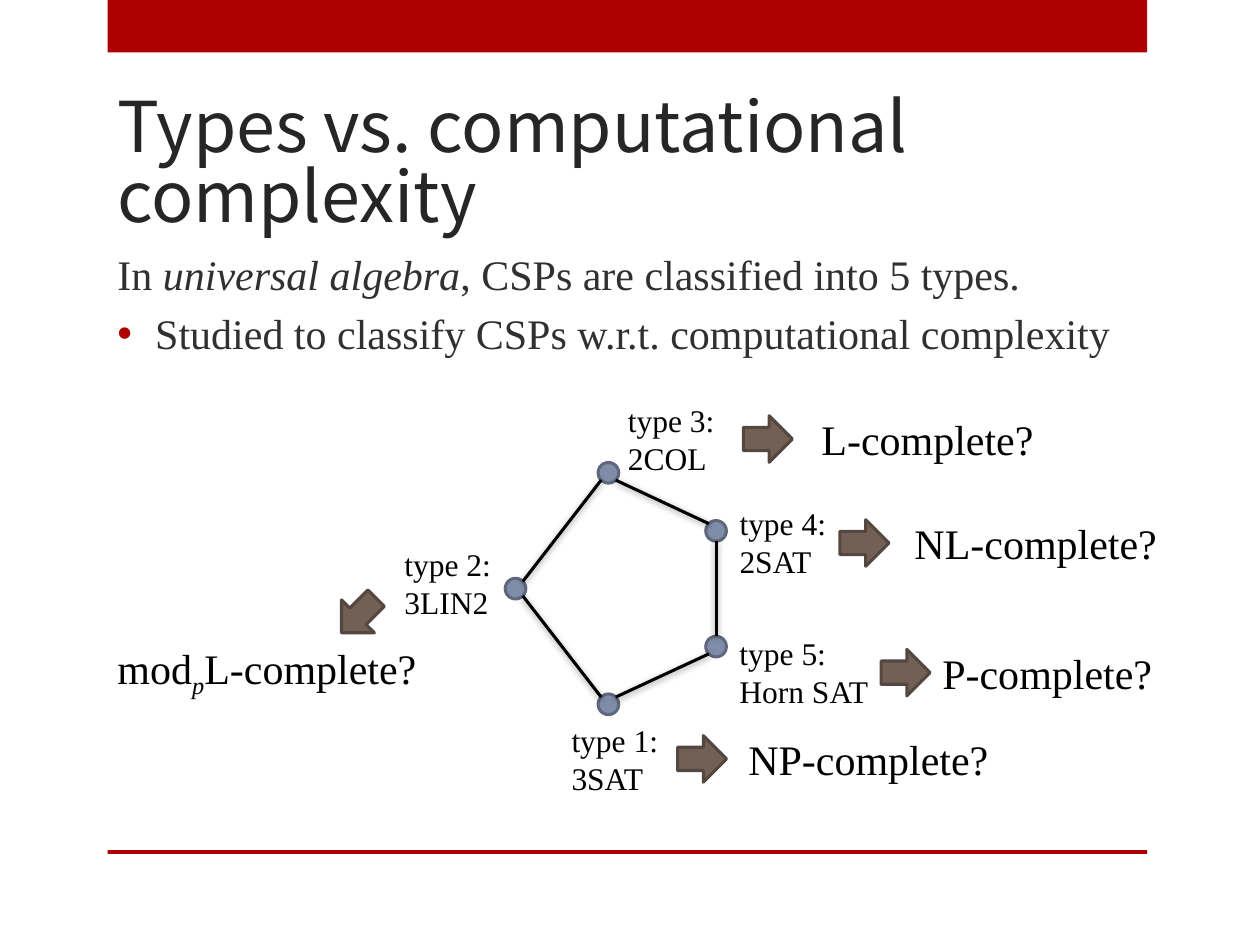
from dataclasses import dataclass
from math import hypot

from lxml.etree import SubElement
from pptx import Presentation
from pptx.dml.color import RGBColor
from pptx.enum.shapes import MSO_CONNECTOR, MSO_SHAPE
from pptx.enum.text import MSO_ANCHOR, MSO_AUTO_SIZE
from pptx.oxml.ns import qn
from pptx.slide import Slide
from pptx.util import Pt

NODE_SIZE = 11.8


def color(hex_text):
    return RGBColor.from_string(hex_text)


def add_element(parent, tag, **attributes):
    return SubElement(parent, qn(tag), attributes)


@dataclass
class TypeDiagram:
    """The slide being filled, with its fonts and colours."""
    slide: Slide
    title_font: str = "Noto Sans CJK JP"
    text_font: str = "Times New Roman"
    accent: str = "AD0101"
    black: str = "000000"
    node_colors: tuple = ("808DA9", "5F687D")
    arrow_colors: tuple = ("726056", "544740")

    def shape(self, kind, left, top, width, height, fill, line=None):
        shape = self.slide.shapes.add_shape(
            kind, Pt(left), Pt(top), Pt(width), Pt(height))
        shape.shadow.inherit = False
        shape.fill.solid()
        shape.fill.fore_color.rgb = color(fill)
        if line:
            shape.line.color.rgb = color(line)
            shape.line.width = Pt(1.75)
        else:
            shape.line.fill.background()
        return shape

    def bar(self, top, height):
        self.shape(MSO_SHAPE.RECTANGLE, 61.5, top, 594, height, self.accent)

    def node(self, x, y):
        self.shape(MSO_SHAPE.OVAL, x - NODE_SIZE / 2, y - NODE_SIZE / 2,
                   NODE_SIZE, NODE_SIZE, *self.node_colors)

    def edge(self, start, end):
        """Join the rims of two nodes, at the corner or side that faces the other."""
        step_x, step_y = ((b > a) - (b < a) for a, b in zip(start, end))
        reach = NODE_SIZE / 2 / hypot(step_x, step_y)
        line = self.slide.shapes.add_connector(
            MSO_CONNECTOR.STRAIGHT,
            Pt(start[0] + step_x * reach), Pt(start[1] + step_y * reach),
            Pt(end[0] - step_x * reach), Pt(end[1] - step_y * reach))
        line.line.color.rgb = color(self.black)
        line.line.width = Pt(1.75)
        effects = add_element(line._element.spPr, "a:effectLst")
        shadow = add_element(effects, "a:outerShdw", blurRad=str(Pt(4)),
                             dist=str(Pt(1)), dir=str(88 * 60000), rotWithShape="0")
        shade = add_element(shadow, "a:srgbClr", val=self.black)
        add_element(shade, "a:alpha", val="40000")

    def arrow(self, left, top, rotation=0):
        arrow = self.shape(MSO_SHAPE.RIGHT_ARROW, left, top, 28, 26.6, *self.arrow_colors)
        arrow.rotation = rotation

    def text(self, left, top, width, height, paragraphs, size, ink=None,
             font=None, wrap=False):
        """Add a text box; each paragraph is a list of (text, style) spans."""
        box = self.slide.shapes.add_textbox(Pt(left), Pt(top), Pt(width), Pt(height))
        frame = box.text_frame
        frame.word_wrap = wrap
        frame.auto_size = MSO_AUTO_SIZE.NONE if wrap else MSO_AUTO_SIZE.SHAPE_TO_FIT_TEXT
        for index, spans in enumerate(paragraphs):
            para = frame.add_paragraph() if index else frame.paragraphs[0]
            para.font.name = font or self.text_font
            para.font.size = Pt(size)
            para.font.color.rgb = color(ink or self.black)
            for words, style in spans:
                span = para.add_run()
                span.text = words
                if style:
                    span.font.italic = True
                if style == "subscript":
                    span._r.get_or_add_rPr().set("baseline", "-25000")
        return frame

    def title(self, words):
        frame = self.text(60, 54, 594, 84.5, [[(words, None)]], 40, "262626",
                          self.title_font, wrap=True)
        frame.vertical_anchor = MSO_ANCHOR.BOTTOM
        frame.paragraphs[0].line_spacing = 0.83

    def body(self, intro, bullet):
        frame = self.text(60, 138.5, 594, 347.5, [intro, bullet], 24, "303030", wrap=True)
        for para in frame.paragraphs:
            para.space_before = Pt(4.8)
        properties = frame.paragraphs[1]._p.get_or_add_pPr()
        properties.set("marL", str(Pt(21.6)))
        properties.set("indent", str(-Pt(21.6)))
        bullet_color = add_element(properties, "a:buClr")
        add_element(bullet_color, "a:srgbClr", val=self.accent)
        add_element(properties, "a:buFont", typeface="Arial")
        add_element(properties, "a:buChar", char="•")

    def type_label(self, left, top, width, number, problem):
        lines = [f"type {number}:", problem]
        self.text(left, top, width, 51, [[(line, None)] for line in lines], 18)

    def answer(self, left, top, width, spans):
        self.text(left, top, width, 36, [spans], 24)


def main():
    deck = Presentation()
    deck.slide_width, deck.slide_height = Pt(720), Pt(540)
    page = TypeDiagram(deck.slides.add_slide(deck.slide_layouts[6]))

    page.bar(0, 30)
    page.bar(485.8, 2.2)
    page.title("Types vs. computational complexity")
    page.body(
        [("In ", None), ("universal algebra", "italic"),
         (", CSPs are classified into 5 types.", None)],
        [("Studied to classify CSPs w.r.t. computational complexity", None)])

    # Corners of the pentagon, in order around it: types 3, 4, 5, 1, 2
    corners = [(347.7, 270.2), (409.2, 303.4), (409.2, 369.5), (347.7, 402.5), (294.6, 336.4)]
    for corner in corners:
        page.node(*corner)
    for start, end in zip(corners, corners[1:] + corners[:1]):
        page.edge(start, end)

    for label in [
        (351.7, 225.5, 65, 3, "2COL"),
        (415.5, 284.5, 65, 4, "2SAT"),
        (415.5, 359, 89, 5, "Horn SAT"),
        (319.5, 408.5, 65, 1, "3SAT"),
        (224, 308, 65, 2, "3LIN2"),
    ]:
        page.type_label(*label)

    for arrow_left, text_left, top, width, words in [
        (424.8, 462.3, 232.8, 137, "L-complete?"),
        (480, 515.5, 292.2, 155.5, "NL-complete?"),
        (503.5, 531.4, 366.3, 135.5, "P-complete?"),
        (387.2, 420.5, 415.6, 154, "NP-complete?"),
    ]:
        page.arrow(arrow_left, top + 4.8)
        page.answer(text_left, top, width, [(words, None)])
    page.arrow(191, 338.4, rotation=135)
    page.answer(60, 363.6, 192, [("mod", None), ("p", "subscript"), ("L-complete?", None)])

    deck.save("out.pptx")


if __name__ == "__main__":
    main()
